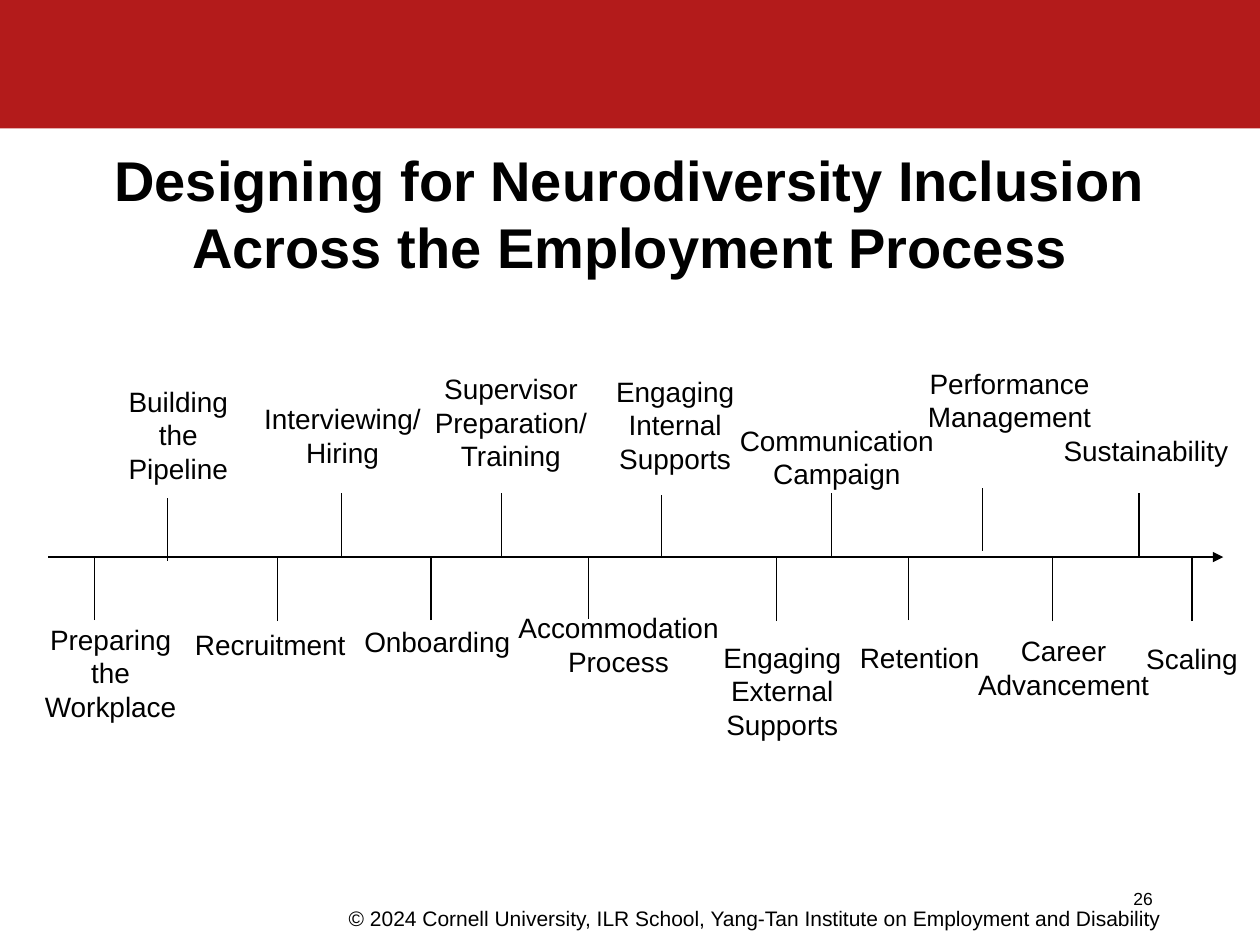
import dataclasses

import pptx
import pptx.dml.color
import pptx.enum.shapes
import pptx.enum.text
import pptx.oxml
import pptx.oxml.ns
import pptx.util
from pptx.util import Cm

ALIGN = pptx.enum.text.PP_ALIGN
ANCHOR = pptx.enum.text.MSO_ANCHOR
RED, BLACK = "B31B1B", "000000"
TICK = 1.27    # tick length, cm
AXIS = 11.23   # height of the time line, cm


@dataclasses.dataclass
class Stage:
    label: str
    left: float
    top: float
    width: float
    lines: int
    tick: float      # x of the tick
    start: float     # upper end of the tick
    align: ALIGN = ALIGN.CENTER


STAGES = [
    Stage("Preparing the Workplace", 0.58, 12.42, 3.3, 3, 1.9, 11.23),
    Stage("Building the Pipeline", 2.11, 7.62, 2.97, 3, 3.38, 10.03),
    Stage("Recruitment", 3.68, 12.52, 4.37, 1, 5.59, 11.25, ALIGN.LEFT),
    Stage("Interviewing/Hiring", 4.95, 7.98, 3.91, 2, 6.88, 9.93),
    Stage("Onboarding", 7.01, 12.47, 3.61, 1, 8.69, 11.23),
    Stage("Supervisor Preparation/Training", 8.38, 7.37, 3.84, 3, 10.11, 9.93),
    Stage("Accommodation Process", 10.08, 12.19, 4.78, 2, 11.86, 11.2),
    Stage("Engaging Internal Supports", 11.96, 7.42, 3.3, 3, 13.34, 9.98),
    Stage("Engaging External Supports", 14.12, 12.78, 3.3, 3, 15.65, 11.25),
    Stage("Communication Campaign", 14.43, 8.41, 4.88, 2, 16.76, 9.93),
    Stage("Retention", 16.89, 12.78, 3.3, 1, 18.31, 11.23),
    Stage("Performance Management", 18.14, 7.26, 4.42, 2, 19.81, 9.83),
    Stage("Career Advancement", 19.33, 12.65, 4.22, 2, 21.21, 11.25),
    Stage("Sustainability", 21.18, 8.61, 3.84, 1, 22.96, 9.93),
    Stage("Scaling", 22.38, 12.8, 3.3, 1, 24.03, 11.25),
]


def paint(form, code: str) -> None:
    """Set a fill, line or font to a hex colour."""
    if hasattr(form, "solid"):
        form.solid()
        form.fore_color.rgb = pptx.dml.color.RGBColor.from_string(code)
    else:
        form.color.rgb = pptx.dml.color.RGBColor.from_string(code)


def write(slide, text: str, *, left: float, top: float, width: float,
          height: float, size: float = 16, bold: bool = False,
          align: ALIGN = ALIGN.CENTER, anchor: ANCHOR = ANCHOR.TOP) -> None:
    box = slide.shapes.add_textbox(Cm(left), Cm(top), Cm(width), Cm(height))
    frame = box.text_frame
    frame.word_wrap = True
    frame.vertical_anchor = anchor
    para = frame.paragraphs[0]
    para.alignment = align
    run = para.add_run()
    run.text = text
    run.font.name = "Arial"
    run.font.size = pptx.util.Pt(size)
    run.font.bold = bold
    paint(run.font, BLACK)


def rule(slide, x1: float, y1: float, x2: float, y2: float,
         arrow: bool = False) -> None:
    line = slide.shapes.add_connector(
        pptx.enum.shapes.MSO_CONNECTOR.STRAIGHT, Cm(x1), Cm(y1), Cm(x2), Cm(y2))
    paint(line.line, BLACK)
    line.line.width = pptx.util.Pt(0.75)
    space = pptx.oxml.ns.nsdecls("a")
    if arrow:
        line.line._get_or_add_ln().append(
            pptx.oxml.parse_xml(f'<a:tailEnd {space} type="triangle"/>'))
    line._element.spPr.append(pptx.oxml.parse_xml(f"<a:effectLst {space}/>"))


def draw(slide, stage: Stage) -> None:
    write(slide, stage.label, left=stage.left, top=stage.top,
          width=stage.width, height=0.25 + 0.69 * stage.lines,
          align=stage.align)
    rule(slide, stage.tick, stage.start + TICK, stage.tick, stage.start)


def main() -> None:
    deck = pptx.Presentation()
    deck.slide_width, deck.slide_height = Cm(25.4), Cm(19.05)
    slide = deck.slides.add_slide(deck.slide_layouts[6])

    # Top band
    band = slide.shapes.add_shape(
        pptx.enum.shapes.MSO_SHAPE.RECTANGLE, 0, 0, deck.slide_width, Cm(2.59))
    band.shadow.inherit = False
    paint(band.fill, RED)
    band.line.fill.background()

    # Title
    write(slide,
          "Designing for Neurodiversity Inclusion Across the Employment Process",
          left=1.9, top=2.87, width=21.6, height=2.82, size=32, bold=True,
          anchor=ANCHOR.MIDDLE)

    # Time line and its stages
    rule(slide, 0.97, AXIS, 24.66, AXIS, arrow=True)
    for stage in STAGES:
        draw(slide, stage)

    # Footer
    write(slide, "© 2024 Cornell University, ILR School, Yang-Tan Institute "
          "on Employment and Disability", left=6.78, top=18.14, width=17.15,
          height=0.76, size=12, align=ALIGN.LEFT)
    write(slide, "26", left=18.21, top=17.78, width=5.28, height=1.27,
          size=10, align=ALIGN.RIGHT)

    deck.save("out.pptx")


if __name__ == "__main__":
    main()
